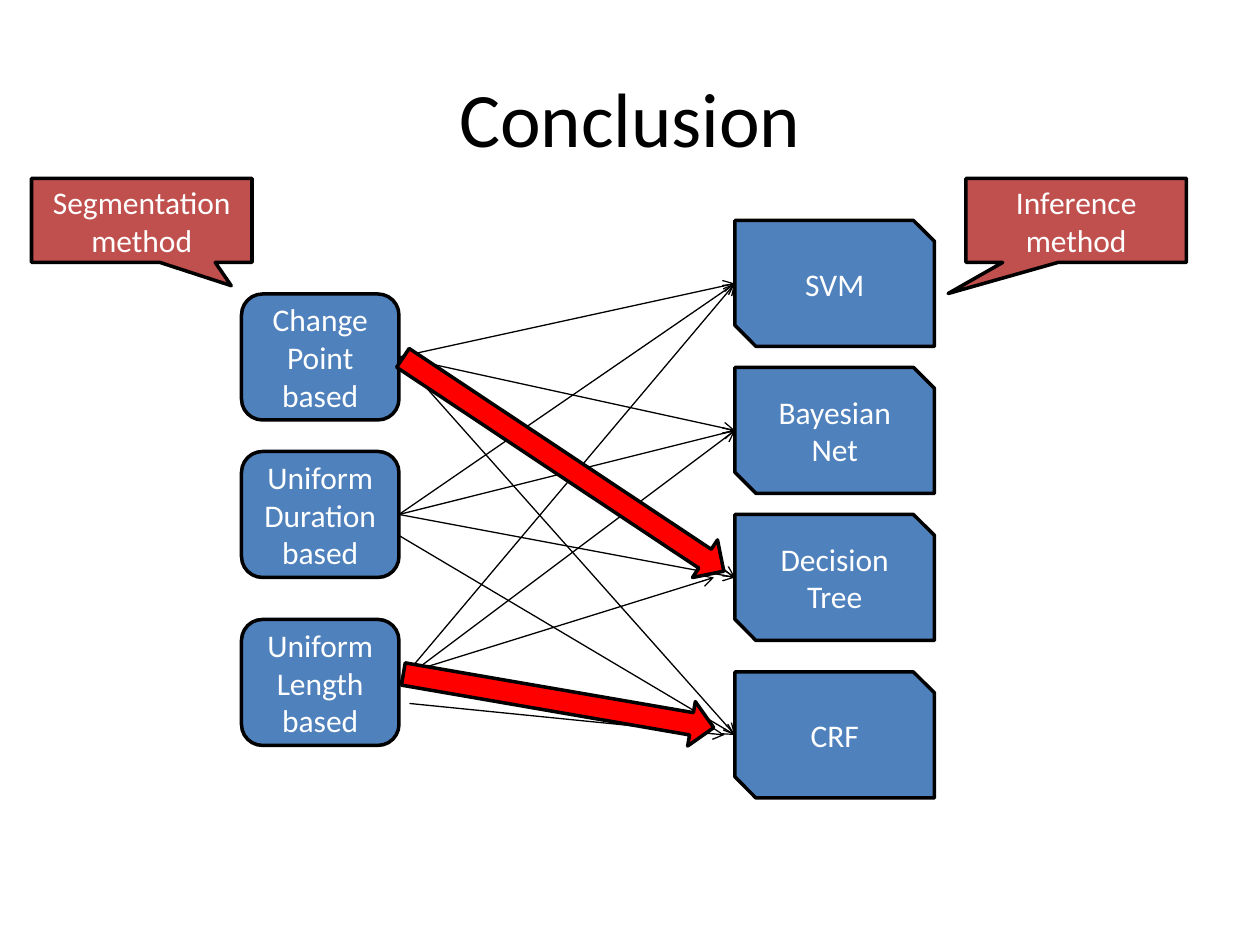
from pptx import Presentation
from pptx.dml.color import RGBColor
from pptx.enum.shapes import MSO_CONNECTOR as Connector, MSO_SHAPE as Shape
from pptx.enum.text import MSO_ANCHOR as Anchor, PP_ALIGN as Align
from pptx.oxml.ns import qn
from pptx.util import Emu, Pt
from lxml.etree import SubElement

EMU_PER_PX = 7620  # 120 px to the inch
BLACK = RGBColor(0x00, 0x00, 0x00)
WHITE = RGBColor(0xFF, 0xFF, 0xFF)
BLUE = RGBColor(0x4F, 0x81, 0xBD)
BRICK = RGBColor(0xC0, 0x50, 0x4D)
RED = RGBColor(0xFF, 0x00, 0x00)


def px(*lengths):
    return [Emu(length * EMU_PER_PX) for length in lengths]


class SlideBuilder:
    font = "Calibri"
    title_size, text_size = Pt(44), Pt(18)
    outline_width, line_width = Pt(2), Pt(0.75)

    def __init__(self, slide):
        self.slide = slide

    def set_text(self, shape, text, size, color):
        frame = shape.text_frame
        frame.text = text
        frame.word_wrap = True
        frame.vertical_anchor = Anchor.MIDDLE
        para = frame.paragraphs[0]
        para.alignment = Align.CENTER
        font = para.runs[0].font
        font.name, font.size = self.font, size
        font.color.rgb = color

    def title(self, text, left, top, width, height):
        title = self.slide.shapes.title
        title.left, title.top, title.width, title.height = px(left, top, width, height)
        self.set_text(title, text, self.title_size, BLACK)

    def shape(self, kind, fill, left, top, width, height, text=""):
        shape = self.slide.shapes.add_shape(kind, *px(left, top, width, height))
        shape.shadow.inherit = False
        shape.fill.solid()
        shape.fill.fore_color.rgb = fill
        shape.line.color.rgb = BLACK
        shape.line.width = self.outline_width
        if text:
            self.set_text(shape, text, self.text_size, WHITE)
        return shape

    def callout(self, text, left, top, width, height, tip):
        callout = self.shape(Shape.RECTANGULAR_CALLOUT, BRICK, left, top, width, height, text)
        callout.adjustments[0], callout.adjustments[1] = tip

    def block_arrow(self, left, top, width, height, angle):
        arrow = self.shape(Shape.RIGHT_ARROW, RED, left, top, width, height)
        arrow.rotation = angle

    def link(self, start, end):
        link = self.slide.shapes.add_connector(Connector.STRAIGHT, *px(*start, *end))
        link.line.color.rgb = BLACK
        link.line.width = self.line_width
        properties = link._element.spPr
        SubElement(properties.find(qn("a:ln")), qn("a:tailEnd"), type="arrow")
        SubElement(properties, qn("a:effectLst"))


SEGMENTATIONS = [("Change Point based", 280), ("Uniform Duration based", 430),
                 ("Uniform Length based", 590)]
INFERENCES = [("SVM", 210), ("Bayesian Net", 350), ("Decision Tree", 490), ("CRF", 640)]
BOX_HEIGHT = 120
SEGMENT_LEFT, SEGMENT_WIDTH = 230, 150
INFERENCE_LEFT, INFERENCE_WIDTH = 700, 190

# Links that do not run between the middles of the box sides
SHIFTED_LINKS = {
    (1, 3): ((380, 510), (700, 700)),
    (2, 2): ((384, 642), (680, 550)),
    (2, 3): ((390, 670), (690, 700)),
}


def main():
    deck = Presentation()
    deck.slide_width, deck.slide_height = px(1200, 900)
    page = SlideBuilder(deck.slides.add_slide(deck.slide_layouts[5]))
    page.title("Conclusion", 60, 36, 1080, 150)

    # Two columns of methods
    for text, top in SEGMENTATIONS:
        page.shape(Shape.ROUNDED_RECTANGLE, BLUE, SEGMENT_LEFT, top,
                   SEGMENT_WIDTH, BOX_HEIGHT, text)
    for text, top in INFERENCES:
        page.shape(Shape.SNIP_2_DIAG_RECTANGLE, BLUE, INFERENCE_LEFT, top,
                   INFERENCE_WIDTH, BOX_HEIGHT, text)

    # Every segmentation method leads to every inference method
    for row, (_, start_top) in enumerate(SEGMENTATIONS):
        for column, (_, end_top) in enumerate(INFERENCES):
            middles = ((SEGMENT_LEFT + SEGMENT_WIDTH, start_top + BOX_HEIGHT // 2),
                       (INFERENCE_LEFT, end_top + BOX_HEIGHT // 2))
            page.link(*SHIFTED_LINKS.get((row, column), middles))

    # Column labels
    page.callout("Segmentation method", 30, 170, 210, 80, (0.406, 0.777))
    page.callout("Inference method", 920, 170, 210, 80, (-0.581, 0.87))

    # Highlighted pairs
    page.block_arrow(353, 421, 367, 43, 33.6)
    page.block_arrow(382, 646, 300, 43, 9.8)

    deck.save("out.pptx")


if __name__ == "__main__":
    main()
